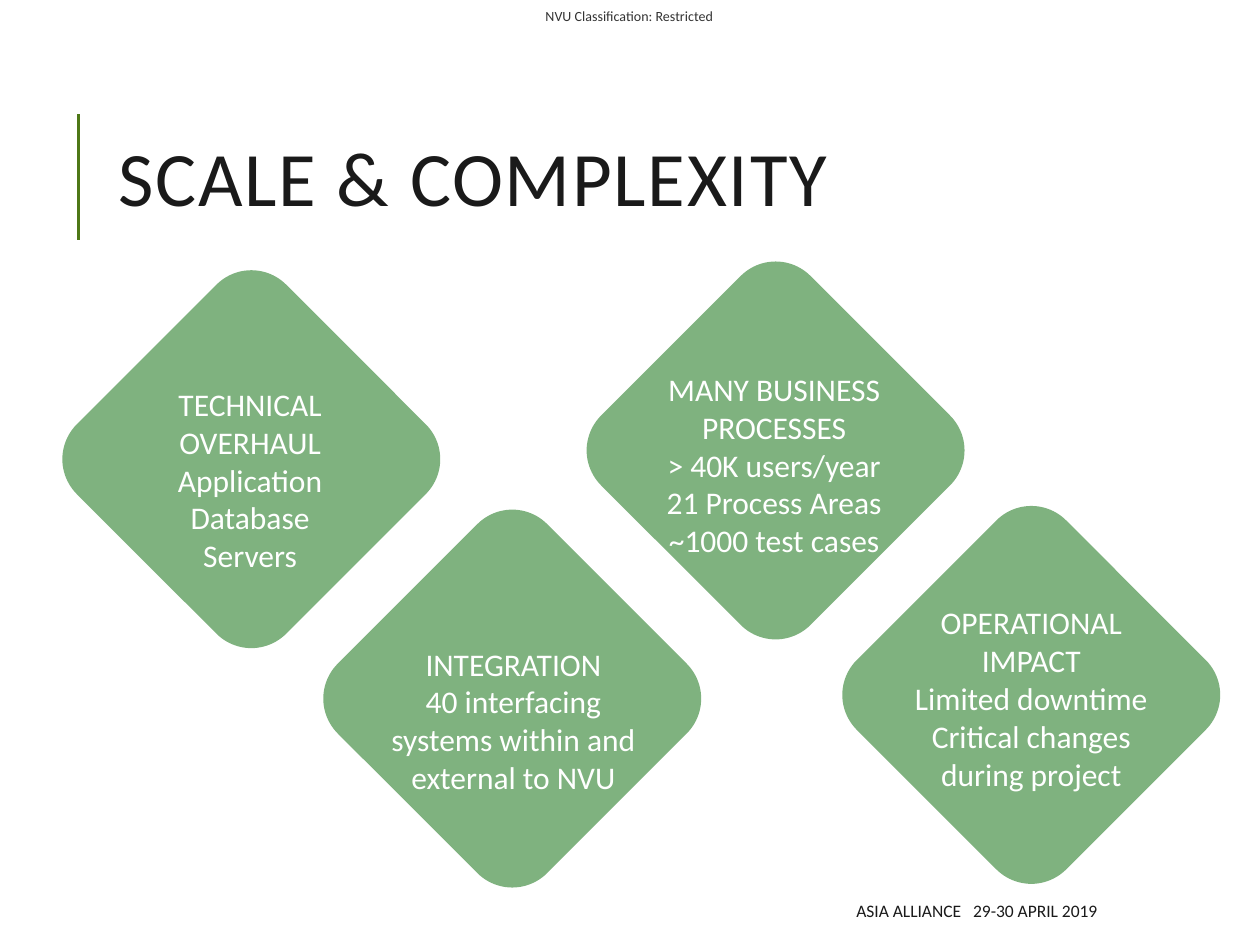
from lxml.etree import SubElement
from pptx import Presentation
from pptx.dml.color import RGBColor as RGB
from pptx.enum.shapes import MSO_CONNECTOR as LINE, MSO_SHAPE as SHAPE
from pptx.enum.text import MSO_ANCHOR as ANCHOR, MSO_AUTO_SIZE as FIT, PP_ALIGN as ALIGN
from pptx.oxml.ns import qn
from pptx.util import Pt

COLORS = {"green": "006600", "rule": "4E7817", "ink": "1A1A1A",
          "gray": "333333", "white": "FFFFFF"}


def write(frame, lines, size=18, color="white", align=ALIGN.CENTER,
          anchor=ANCHOR.TOP, space=1.0):
    """Fill a text frame, one paragraph for each line."""
    frame.word_wrap = True
    frame.auto_size = FIT.NONE
    frame.vertical_anchor = anchor
    for i, line in enumerate(lines):
        para = frame.paragraphs[0] if i == 0 else frame.add_paragraph()
        para.alignment = align
        para.line_spacing = space
        run = para.add_run()
        run.text = line
        run.font.name = "Calibri"
        run.font.size = Pt(size)
        run.font.color.rgb = RGB.from_string(COLORS[color])


prs = Presentation()
prs.slide_width, prs.slide_height = Pt(720), Pt(540)
slide = prs.slides.add_slide(prs.slide_layouts[5])
shapes = slide.shapes

# Rule beside the title
rule = shapes.add_connector(LINE.STRAIGHT, Pt(44.8), Pt(137), Pt(44.8), Pt(65))
rule.line.color.rgb = RGB.from_string(COLORS["rule"])
rule.line.width = Pt(1.5)
SubElement(rule._element.spPr, qn("a:effectLst"))

# Classification label
label = shapes.add_textbox(Pt(301), Pt(0), Pt(117.4), Pt(18)).text_frame
label.margin_left = label.margin_right = label.margin_top = label.margin_bottom = 0
write(label, ["NVU Classification: Restricted"], size=8, color="gray",
      anchor=ANCHOR.MIDDLE)

# Title
title = shapes.title
title.left, title.top, title.width, title.height = Pt(60.5), Pt(46.3), Pt(573.8), Pt(118)
write(title.text_frame, ["SCALE & COMPLEXITY"], size=44, color="ink",
      align=ALIGN.LEFT, anchor=ANCHOR.MIDDLE, space=0.8)
title.text_frame.paragraphs[0].runs[0].font._element.set("spc", "100")

# Diamonds: left and top of the tile, then box and lines of its text
SIDE = Pt(169.2)
TILES = [
    (59, 177.8, (61.9, 216.5, 162, 116.6),
     ["TECHNICAL OVERHAUL", "Application", "Database", "Servers"]),
    (208.1, 314.6, (205.9, 364.8, 175, 94.3),
     ["INTEGRATION", "40 interfacing systems within and external to NVU"]),
    (358.6, 172.8, (361.4, 207.9, 162, 116.6),
     ["MANY BUSINESS PROCESSES", "> 40K users/year", "21 Process Areas",
      "~1000 test cases"]),
    (504.7, 312.5, (508.3, 341.3, 162, 116.6),
     ["OPERATIONAL", "IMPACT", "Limited downtime", "Critical changes during project"]),
]
for left, top, box, lines in TILES:
    tile = shapes.add_shape(SHAPE.ROUNDED_RECTANGLE, Pt(left), Pt(top), SIDE, SIDE)
    tile.rotation = 45
    tile.shadow.inherit = False
    tile.line.fill.background()
    tile.fill.solid()
    tile.fill.fore_color.rgb = RGB.from_string(COLORS["green"])
    tint = tile._element.spPr.find(qn("a:solidFill"))[0]
    SubElement(tint, qn("a:alpha"), val="50000")
    write(shapes.add_textbox(*map(Pt, box)).text_frame, lines)

# Footer: event and date, set apart by a tab stop
foot = shapes.add_textbox(Pt(482.3), Pt(509.5), Pt(152), Pt(21.6)).text_frame
write(foot, ["ASIA ALLIANCE\t29-30 APRIL 2019"], size=10, color="ink",
      align=ALIGN.LEFT, anchor=ANCHOR.MIDDLE)
tabs = SubElement(foot.paragraphs[0]._p.get_or_add_pPr(), qn("a:tabLst"))
SubElement(tabs, qn("a:tab"), pos=str(Pt(66.7)), algn="l")

prs.save("out.pptx")
